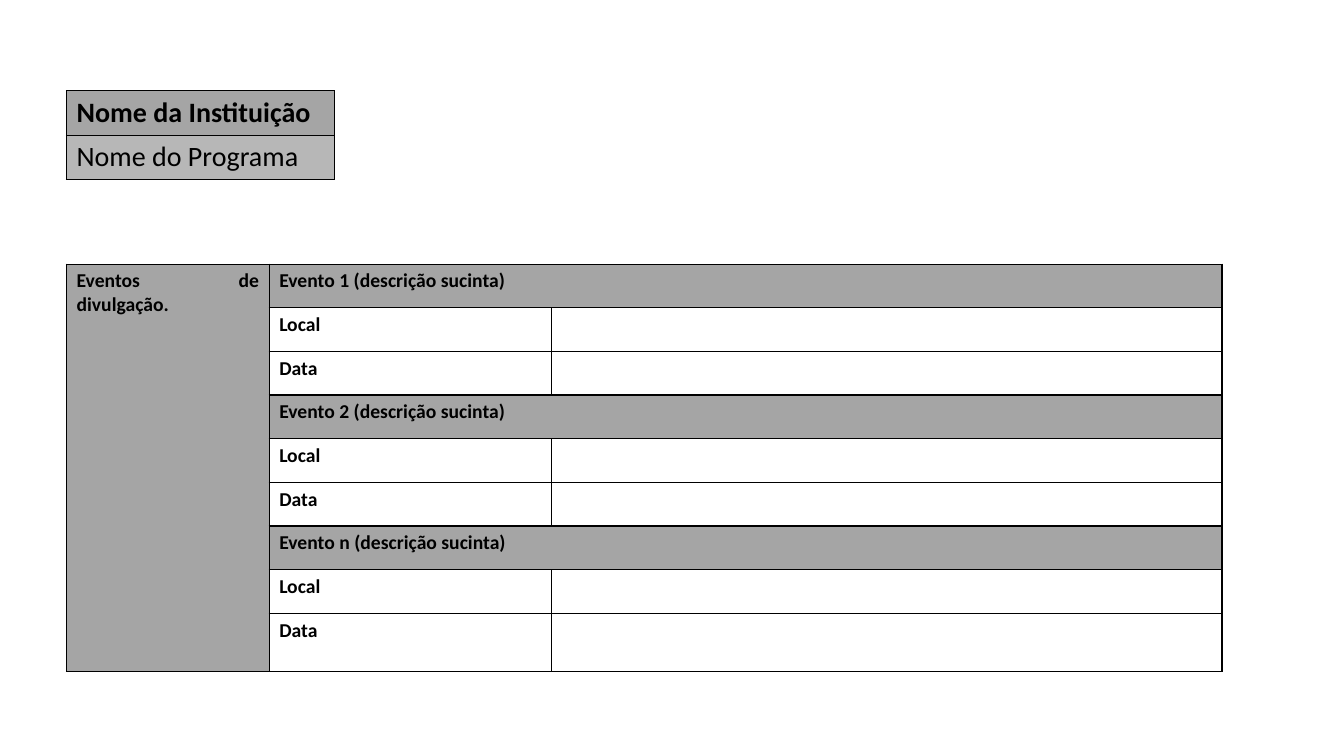
import pptx
import pptx.util
import pptx.dml.color
import pptx.enum.text
from lxml import etree

Inches, Pt = pptx.util.Inches, pptx.util.Pt
RGBColor = pptx.dml.color.RGBColor

BLACK = RGBColor(0x00, 0x00, 0x00)
GRAY = RGBColor(0xA5, 0xA5, 0xA5)
LIGHT_GRAY = RGBColor(0xB7, 0xB7, 0xB7)

INSTITUTION = "Nome da Instituição"
PROGRAM = "Nome do Programa"
EVENTS_LABEL = "Eventos de divulgação."
EVENTS = ["Evento 1 (descrição sucinta)",
          "Evento 2 (descrição sucinta)",
          "Evento n (descrição sucinta)"]
DETAILS = ["Local", "Data"]

LEFT = 0.66
HEADER_TOP, HEADER_COLS, HEADER_ROWS = 0.9, [2.66], [0.44] * 2
EVENTS_TOP, EVENTS_COLS = 2.62, [2.01, 2.8, 6.65]
EVENTS_ROWS = [3.9 / 9] * 8 + [0.57]
HEADER_SIZE, EVENTS_SIZE = 20, 14


def add_borders(cell):
    tc_pr = cell._tc.get_or_add_tcPr()
    ns = "{http://schemas.openxmlformats.org/drawingml/2006/main}"
    for i, side in enumerate(("lnL", "lnR", "lnT", "lnB")):
        ln = etree.Element(ns + side, w=str(Pt(1)))
        fill = etree.SubElement(ln, ns + "solidFill")
        etree.SubElement(fill, ns + "srgbClr", val=str(BLACK))
        tc_pr.insert(i, ln)


def add_grid(slide, top, cols, rows):
    """Add an empty table with black borders and no fill."""
    table = slide.shapes.add_table(
        len(rows), len(cols), Inches(LEFT), Inches(top),
        Inches(sum(cols)), Inches(sum(rows))).table
    table.first_row = table.horz_banding = False
    for col, width in zip(table.columns, cols):
        col.width = Inches(width)
    for row, height in zip(table.rows, rows):
        row.height = Inches(height)
    for cell in table.iter_cells():
        cell.fill.background()
        add_borders(cell)
    return table


def write(cell, text, size, fill=None, bold=True):
    r = cell.text_frame.paragraphs[0].add_run()
    r.text = text
    font_format = {"name": "Calibri", "size": Pt(size), "bold": bold}
    for name, value in font_format.items():
        setattr(r.font, name, value)
    r.font.color.rgb = BLACK
    if fill is not None:
        cell.fill.solid()
        cell.fill.fore_color.rgb = fill


prs = pptx.Presentation()
prs.slide_width, prs.slide_height = Inches(13.33), Inches(7.5)
slide = prs.slides.add_slide(prs.slide_layouts[6])

events = add_grid(slide, EVENTS_TOP, EVENTS_COLS, EVENTS_ROWS)
label = events.cell(0, 0)
label.merge(events.cell(len(EVENTS_ROWS) - 1, 0))
write(label, EVENTS_LABEL, EVENTS_SIZE, GRAY)
label.text_frame.paragraphs[0].alignment = pptx.enum.text.PP_ALIGN.JUSTIFY
for i, event in enumerate(EVENTS):
    row = i * (1 + len(DETAILS))
    events.cell(row, 1).merge(events.cell(row, 2))
    write(events.cell(row, 1), event, EVENTS_SIZE, GRAY)
    for j, detail in enumerate(DETAILS, 1):
        write(events.cell(row + j, 1), detail, EVENTS_SIZE)

header = add_grid(slide, HEADER_TOP, HEADER_COLS, HEADER_ROWS)
write(header.cell(0, 0), INSTITUTION, HEADER_SIZE, GRAY)
write(header.cell(1, 0), PROGRAM, HEADER_SIZE, LIGHT_GRAY, bold=False)

prs.save("out.pptx")
